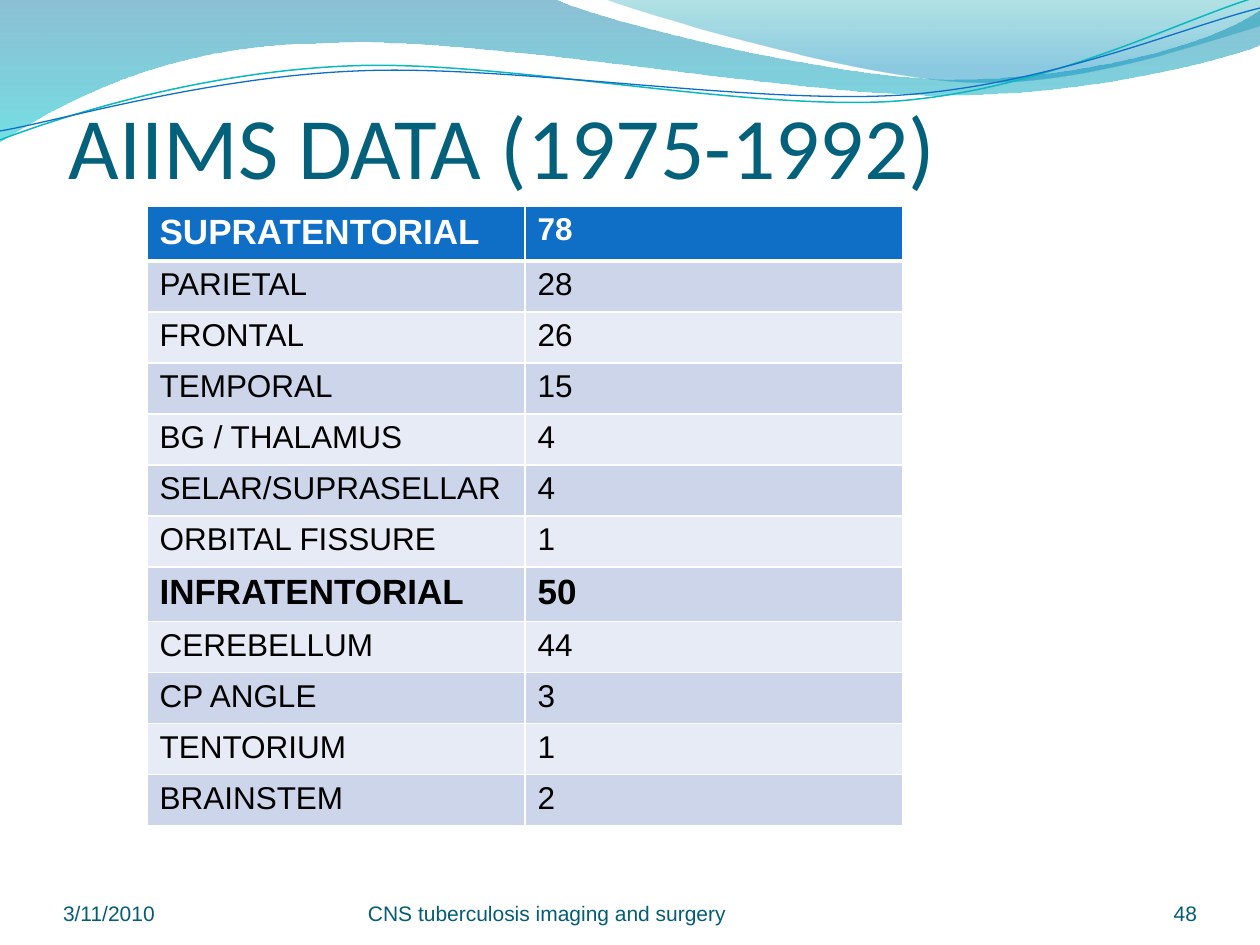
from collections import namedtuple
from dataclasses import dataclass
from math import cos, radians, sin

from lxml.etree import SubElement
from pptx import Presentation
from pptx.dml.color import RGBColor as Rgb
from pptx.enum.text import MSO_ANCHOR as Anchor, PP_ALIGN as Align
from pptx.oxml import parse_xml
from pptx.oxml.ns import nsdecls, qn
from pptx.util import Emu, Pt

Box = namedtuple("Box", "left top width height")


@dataclass(frozen=True)
class Theme:
    title_font: str = "Calibri"
    body_font: str = "Arial"
    title_size: int = 50
    group_size: int = 20
    row_size: int = 18
    footer_size: int = 12
    title: str = "04617B"
    footer: str = "045D75"
    header: str = "0F6FC6"
    white: str = "FFFFFF"
    black: str = "000000"
    bands: tuple = ("CCD5EA", "E7EBF5")
    left_wave: tuple = ((0, "0074A1", 45), (1, "00C6CF", 55))
    right_wave: tuple = ((0, "00A1A9", 30), (0.8, "008BBF", 45))
    teal_line: str = "0AB8BF"
    blue_line: str = "0F6FC6"


THEME = Theme()
PAGE = Box(0, 0, 1260, 945)
CURVE_STEPS = 24
SWOOSH_TILT = 2.7

LEFT_WAVE = [
    (0, -1), (554, -1),
    (600, 21, 837, 79, 955, 79), (1075, 79, 1207, 47, 1260, 11),
    (1261, 45),
    (1239, 55, 1096, 96, 940, 95), (784, 95, 481, 35, 324, 43),
    (163, 44, 58, 105, -1, 142), (0, -1),
]
RIGHT_WAVE = [
    (604, -1), (641, 14, 859, 78, 969, 82), (1079, 87, 1211, 40, 1260, 26),
    (1260, 0), (604, -1),
]
TEAL_LINE = [
    (0, 140), (60, 117, 199, 72, 349, 66), (498, 59, 747, 112, 898, 101),
    (1050, 89, 1182, 19, 1257, -3),
]
BLUE_LINE = [
    (0, 131), (59, 121, 207, 77, 357, 71), (508, 64, 752, 105, 903, 95),
    (1053, 84, 1186, 26, 1260, 8),
]

ROWS = [
    ("SUPRATENTORIAL", "78"), ("PARIETAL", "28"), ("FRONTAL", "26"),
    ("TEMPORAL", "15"), ("BG / THALAMUS", "4"), ("SELAR/SUPRASELLAR", "4"),
    ("ORBITAL FISSURE", "1"), ("INFRATENTORIAL", "50"), ("CEREBELLUM", "44"),
    ("CP ANGLE", "3"), ("TENTORIUM", "1"), ("BRAINSTEM", "2"),
]
GROUP_ROWS = (0, 7)


def px(length):
    return Emu(round(length * 914400 / 126))


def style_font(font, name, size, color, bold=False):
    font.name, font.size, font.bold = name, Pt(size), bold
    font.color.rgb = Rgb.from_string(color)


def add_text(page, box, text, name, size, color, align=Align.LEFT, top_inset=0):
    frame = page.shapes.add_textbox(*map(px, box)).text_frame
    frame.word_wrap = True
    frame.vertical_anchor = Anchor.BOTTOM
    frame.margin_left = frame.margin_right = frame.margin_bottom = 0
    frame.margin_top = px(top_inset)
    para = frame.paragraphs[0]
    para.text, para.alignment = text, align
    style_font(para.font, name, size, color)


def pairs(segment):
    return list(zip(segment[::2], segment[1::2]))


def trace(outline):
    points = [outline[0]]
    for segment in outline[1:]:
        knots = [points[-1], *pairs(segment)]
        if len(knots) == 2:
            points.append(segment)
            continue
        for step in range(1, CURVE_STEPS + 1):
            t = step / CURVE_STEPS
            weights = ((1 - t) ** 3, 3 * t * (1 - t) ** 2, 3 * t * t * (1 - t), t ** 3)
            points.append(tuple(sum(w * v for w, v in zip(weights, axis))
                                for axis in zip(*knots)))
    return points


def turn(outline, center, degrees):
    cosine, sine = cos(radians(degrees)), sin(radians(degrees))
    turned = []
    for segment in outline:
        offsets = [(x - center[0], y - center[1]) for x, y in pairs(segment)]
        turned.append(tuple(value for x, y in offsets for value in (
            center[0] + x * cosine - y * sine, center[1] + x * sine + y * cosine)))
    return turned


def add_outline(page, box, outline, closed):
    points = [(px(box.left + x), px(box.top + y)) for x, y in trace(outline)]
    builder = page.shapes.build_freeform(*points[0])
    builder.add_line_segments(points[1:], close=closed)
    shape = builder.convert_to_shape()
    shape.shadow.inherit = False
    path = next(shape.element.iter(qn("a:path")))
    for child in list(path):
        path.remove(child)
    for index, segment in enumerate(outline):
        tag = "moveTo" if index == 0 else "lnTo" if len(segment) == 2 else "cubicBezTo"
        command = SubElement(path, qn(f"a:{tag}"))
        for x, y in pairs(segment):
            point = SubElement(command, qn("a:pt"))
            point.set("x", str(px(box.left + x) - shape.left))
            point.set("y", str(px(box.top + y) - shape.top))
    if closed:
        SubElement(path, qn("a:close"))
    return shape


def add_wave(page, box, outline, stops):
    shape = add_outline(page, box, outline, True)
    shape.line.fill.background()
    shape.fill.gradient()
    shape.fill.gradient_angle = 270
    for stop, (position, color, _) in zip(shape.fill.gradient_stops, stops):
        stop.position = position
        stop.color.rgb = Rgb.from_string(color)
    for color, (_, _, opacity) in zip(shape.element.iter(qn("a:srgbClr")), stops):
        SubElement(color, qn("a:alpha")).set("val", str(opacity * 1000))


def add_swoosh(page, box, outline, center, color, width):
    level = turn(outline, center, SWOOSH_TILT)
    shape = add_outline(page, box, level, False)
    shape.rotation = 360 - SWOOSH_TILT
    shape.fill.background()
    shape.line.color.rgb = Rgb.from_string(color)
    shape.line.width = Pt(width)


def add_banner(page, box):
    add_wave(page, box, LEFT_WAVE, THEME.left_wave)
    add_wave(page, box, RIGHT_WAVE, THEME.right_wave)
    add_swoosh(page, box, TEAL_LINE, (629, 72), THEME.teal_line, 0.85)
    add_swoosh(page, box, BLUE_LINE, (629, 74), THEME.blue_line, 0.75)


def set_borders(cell, top, bottom):
    properties = cell._tc.get_or_add_tcPr()
    for index, (side, width) in enumerate(zip("LRTB", (1, 1, top, bottom))):
        properties.insert(index, parse_xml(
            f'<a:ln{side} {nsdecls("a")} w="{Pt(width)}"><a:solidFill>'
            f'<a:srgbClr val="{THEME.white}"/></a:solidFill></a:ln{side}>'))


def add_data_table(page, box):
    table = page.shapes.add_table(len(ROWS), 2, *map(px, box)).table
    for column in table.columns:
        column.width = px(box.width // 2)
    for index, values in enumerate(ROWS):
        header, group = index == 0, index in GROUP_ROWS
        table.rows[index].height = px(55 if header else 54 if group else 51)
        fill = THEME.header if header else THEME.bands[(index - 1) % 2]
        for column, value in enumerate(values):
            cell = table.cell(index, column)
            cell.fill.solid()
            cell.fill.fore_color.rgb = Rgb.from_string(fill)
            set_borders(cell, 3 if index == 1 else 1, 3 if header else 1)
            para = cell.text_frame.paragraphs[0]
            para.text = value
            large = group and not (header and column == 1)
            style_font(para.font, THEME.body_font,
                       THEME.group_size if large else THEME.row_size,
                       THEME.white if header else THEME.black, group)


def add_footer(page, box):
    parts = [
        (0, 294, "3/11/2010", Align.LEFT),
        (305, 462, "CNS tuberculosis imaging and surgery", Align.LEFT),
        (box.width - 105, 105, "48", Align.RIGHT),
    ]
    for left, width, text, align in parts:
        add_text(page, Box(box.left + left, box.top, width, box.height), text,
                 THEME.body_font, THEME.footer_size, THEME.footer, align)


def main():
    deck = Presentation()
    deck.slide_width, deck.slide_height = px(PAGE.width), px(PAGE.height)
    page = deck.slides.add_slide(deck.slide_layouts[6])
    add_banner(page, PAGE)
    add_text(page, Box(69, 39, 1134, 158), "AIIMS DATA (1975-1992)",
             THEME.title_font, THEME.title_size, THEME.title, top_inset=6)
    add_data_table(page, Box(147, 206, 756, 619))
    add_footer(page, Box(63, 876, 1134, 50))
    deck.save("out.pptx")


if __name__ == "__main__":
    main()
